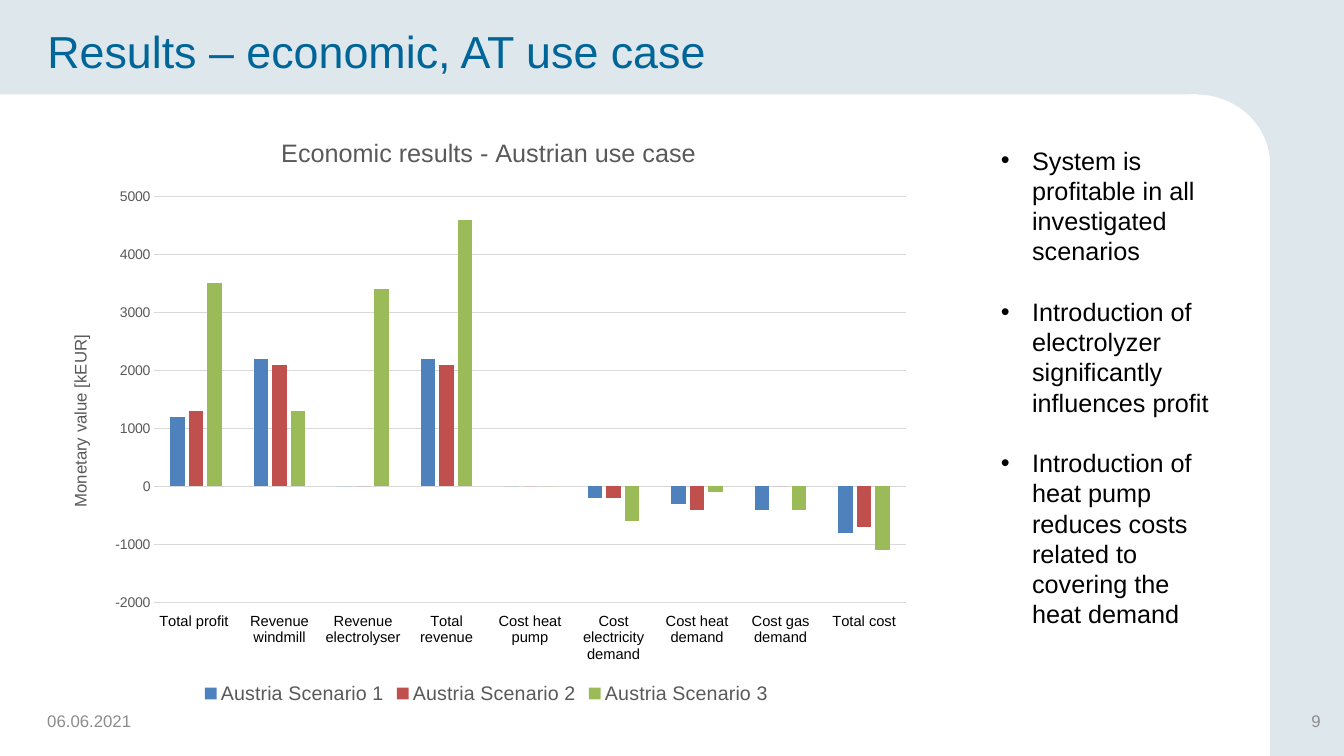
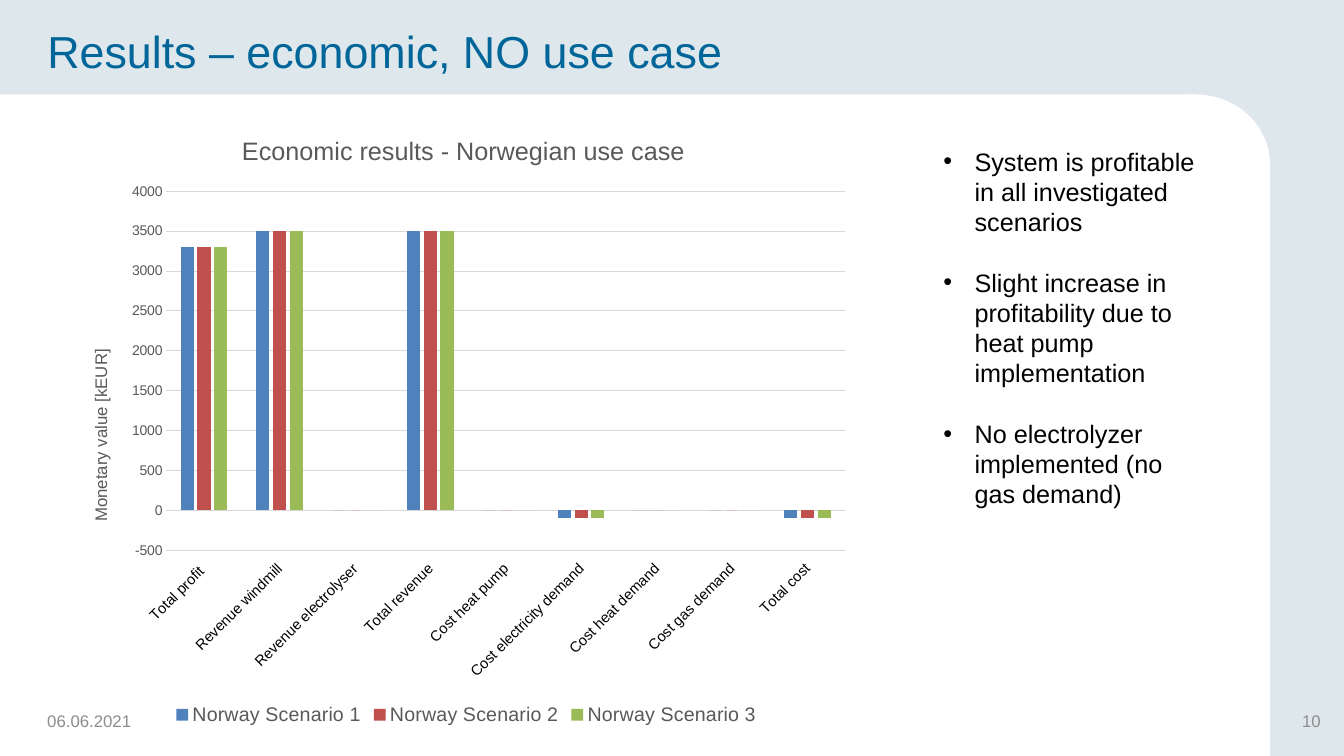
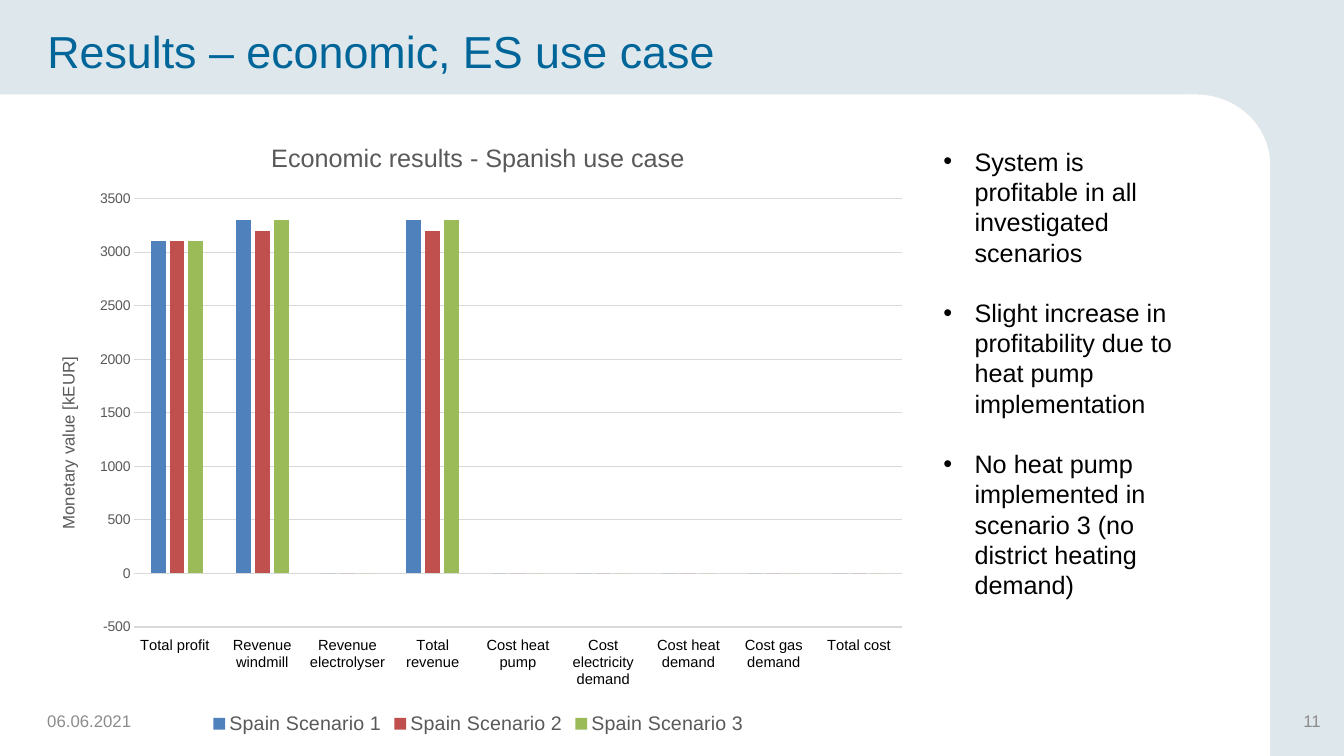
from dataclasses import dataclass

from lxml.etree import SubElement
from pptx import Presentation
from pptx.chart.data import CategoryChartData
from pptx.dml.color import RGBColor
from pptx.enum.chart import (XL_CHART_TYPE, XL_LEGEND_POSITION, XL_TICK_LABEL_POSITION,
                             XL_TICK_MARK)
from pptx.enum.shapes import MSO_SHAPE
from pptx.enum.text import MSO_ANCHOR, PP_ALIGN
from pptx.oxml.ns import qn
from pptx.util import Inches, Pt


@dataclass(frozen=True)
class Theme:
    font: str = "Arial"
    background: str = "DEE7EC"
    panel: str = "FFFFFF"
    title: str = "006699"
    footer: str = "8C8C8C"
    text: str = "000000"
    chart_text: str = "595959"
    grid: str = "D9D9D9"
    series: tuple = ("4F81BD", "C0504D", "9BBB59")
    title_size: float = 32
    body_size: float = 18
    legend_size: float = 14
    footer_size: float = 12
    category_size: float = 10.5
    value_size: float = 10


WIDTH, HEIGHT = Inches(13.33), Inches(7.5)
DATE = "06.06.2021"
CATEGORIES = ("Total profit ", "Revenue windmill", "Revenue electrolyser", "Total revenue",
              "Cost heat pump", "Cost electricity demand", "Cost heat demand",
              "Cost gas demand", "Total cost")

# White content panel: two rectangles meeting at a rounded corner
PANEL = (
    (MSO_SHAPE.RECTANGLE, (0, 12.5, 89.1, 87.5)),
    (MSO_SHAPE.OVAL, (83.4, 12.5, 11.1, 18.5)),
    (MSO_SHAPE.RECTANGLE, (53.55, 21.6, 40.95, 78.4)),
)

# Areas are left, top, width, height in percent of the slide;
# plot and title places are shares of the chart
USE_CASES = (
    dict(
        code="AT", country="Austria", adjective="Austrian", number=9,
        chart_area=(3.68, 15.87, 65.03, 77.87), plot=(0.12, 0.13, 0.86, 0.69),
        title_at=(0.26, 0.02), axis_title_at=(0.02, 0.36),
        scale=(-2000, 5000, 1000), label_angle=0,
        values=((1200, 2200, 0, 2200, 0, -200, -300, -400, -800),
                (1300, 2100, 0, 2100, 0, -200, -400, 0, -700),
                (3500, 1300, 3400, 4600, 0, -600, -100, -400, -1100)),
        text_area=(73.73, 18.53, 17.93, 70),
        points=("System is profitable in all investigated scenarios",
                "Introduction of electrolyzer significantly influences profit",
                "Introduction of heat pump reduces costs related to covering the heat demand"),
    ),
    dict(
        code="NO", country="Norway", adjective="Norwegian", number=10,
        chart_area=(5.33, 14.67, 58.73, 81.87), plot=(0.12, 0.13, 0.86, 0.58),
        title_at=(0.21, 0.03), axis_title_at=(0.02, 0.38),
        scale=(-500, 4000, 500), label_angle=-45,
        values=((3300, 3500, 0, 3500, 0, -100, 0, 0, -100),
                (3300, 3500, 0, 3500, 0, -100, 0, 0, -100),
                (3300, 3500, 0, 3500, 0, -100, 0, 0, -100)),
        text_area=(69.45, 18.67, 20.7, 53.87),
        points=("System is profitable in all investigated scenarios",
                "Slight increase in profitability due to heat pump implementation",
                "No electrolyzer implemented (no gas demand)"),
    ),
    dict(
        code="ES", country="Spain", adjective="Spanish", number=11,
        chart_area=(2.78, 15.6, 65.63, 82.13), plot=(0.11, 0.13, 0.87, 0.69),
        title_at=(0.26, 0.03), axis_title_at=(0.02, 0.38),
        scale=(-500, 3500, 500), label_angle=0,
        values=((3100, 3300, 0, 3300, 0, 0, 0, 0, 0),
                (3100, 3200, 0, 3200, 0, 0, 0, 0, 0),
                (3100, 3300, 0, 3300, 0, 0, 0, 0, 0)),
        text_area=(69.45, 18.67, 19.8, 61.87),
        points=("System is profitable in all investigated scenarios",
                "Slight increase in profitability due to heat pump implementation",
                "No heat pump implemented in scenario 3 (no district heating demand)"),
    ),
)


def place(parent, index, **shares):
    """Give a chart part a fixed place, in shares of the chart."""
    layout = parent.find(qn("c:layout"))
    if layout is not None:
        parent.remove(layout)
    layout = parent.makeelement(qn("c:layout"), {})
    parent.insert(index, layout)
    manual = SubElement(layout, qn("c:manualLayout"))
    if "w" in shares:
        SubElement(manual, qn("c:layoutTarget"), val="inner")
    for mode in ("xMode", "yMode"):
        SubElement(manual, qn(f"c:{mode}"), val="edge")
    for key, share in shares.items():
        SubElement(manual, qn(f"c:{key}"), val=str(share))


def rotate(element, degrees):
    body = next(element.iter(qn("a:bodyPr")))
    body.set("rot", str(degrees * 60000))
    body.set("vert", "horz")


class Deck:
    def __init__(self, theme):
        self.theme = theme
        self.presentation = Presentation()
        self.presentation.slide_width = WIDTH
        self.presentation.slide_height = HEIGHT
        self.slide = None

    def area(self, left, top, width, height):
        return (round(left * WIDTH / 100), round(top * HEIGHT / 100),
                round(width * WIDTH / 100), round(height * HEIGHT / 100))

    def style(self, font, size, color):
        font.name, font.size, font.bold = self.theme.font, Pt(size), False
        font.color.rgb = RGBColor.from_string(color)

    def run(self, paragraph, text, size, color):
        run = paragraph.add_run()
        run.text = text
        self.style(run.font, size, color)

    def add_slide(self, title, number):
        theme = self.theme
        self.slide = self.presentation.slides.add_slide(self.presentation.slide_layouts[6])
        fill = self.slide.background.fill
        fill.solid()
        fill.fore_color.rgb = RGBColor.from_string(theme.background)
        for kind, area in PANEL:
            self.add_panel(kind, area)
        self.add_line((2.78, 0, 85.43, 13.33), title, theme.title_size, theme.title)
        self.add_line((2.78, 92.67, 22.73, 5.33), DATE, theme.footer_size, theme.footer)
        self.add_line((75.68, 92.67, 23.33, 5.33), str(number), theme.footer_size,
                      theme.footer, PP_ALIGN.RIGHT)

    def add_panel(self, kind, area):
        shape = self.slide.shapes.add_shape(kind, *self.area(*area))
        shape.shadow.inherit = False
        shape.fill.solid()
        shape.fill.fore_color.rgb = RGBColor.from_string(self.theme.panel)
        shape.line.fill.background()

    def add_text_frame(self, area, anchor):
        frame = self.slide.shapes.add_textbox(*self.area(*area)).text_frame
        frame.word_wrap = True
        frame.vertical_anchor = anchor
        return frame

    def add_line(self, area, text, size, color, align=PP_ALIGN.LEFT):
        paragraph = self.add_text_frame(area, MSO_ANCHOR.MIDDLE).paragraphs[0]
        paragraph.alignment = align
        self.run(paragraph, text, size, color)

    def add_bullets(self, area, points):
        frame = self.add_text_frame(area, MSO_ANCHOR.TOP)
        for index, point in enumerate(points):
            paragraph = frame.add_paragraph() if index else frame.paragraphs[0]
            properties = paragraph._p.get_or_add_pPr()
            properties.set("marL", str(Inches(0.31)))
            properties.set("indent", str(-Inches(0.31)))
            SubElement(properties, qn("a:buFont"), typeface=self.theme.font)
            SubElement(properties, qn("a:buChar"), char="•")
            paragraph.space_before = Pt(21.6 if index else 0)
            self.run(paragraph, point, self.theme.body_size, self.theme.text)

    def add_chart(self, case):
        theme = self.theme
        data = CategoryChartData(number_format="0")
        data.categories = CATEGORIES
        for number, values in enumerate(case["values"], 1):
            data.add_series(f"{case['country']} Scenario {number}", values)
        chart = self.slide.shapes.add_chart(
            XL_CHART_TYPE.COLUMN_CLUSTERED, *self.area(*case["chart_area"]), data).chart
        self.style(chart.font, theme.value_size, theme.text)

        # Columns
        columns = chart.plots[0]
        columns.gap_width, columns.overlap = 219, -27
        columns.vary_by_categories = False
        for series, color in zip(columns.series, theme.series):
            series.invert_if_negative = False
            series.format.fill.solid()
            series.format.fill.fore_color.rgb = RGBColor.from_string(color)
        left, top, width, height = case["plot"]
        place(chart.element.find(f".//{qn('c:plotArea')}"), 0, x=left, y=top, w=width, h=height)

        # Title and legend
        chart.has_title = True
        self.run(chart.chart_title.text_frame.paragraphs[0],
                 f"Economic results - {case['adjective']} use case",
                 theme.body_size, theme.chart_text)
        chart.chart_title.include_in_layout = False
        left, top = case["title_at"]
        place(chart.element.find(f".//{qn('c:chart')}/{qn('c:title')}"), 1, x=left, y=top)
        chart.has_legend = True
        chart.legend.position = XL_LEGEND_POSITION.BOTTOM
        chart.legend.include_in_layout = False
        self.style(chart.legend.font, theme.legend_size, theme.chart_text)

        # Axes
        category_axis, value_axis = chart.category_axis, chart.value_axis
        for axis in (category_axis, value_axis):
            axis.major_tick_mark = axis.minor_tick_mark = XL_TICK_MARK.NONE
        self.style(category_axis.tick_labels.font, theme.category_size, theme.text)
        category_axis.tick_label_position = XL_TICK_LABEL_POSITION.LOW
        if case["label_angle"]:
            rotate(chart.element.find(f".//{qn('c:catAx')}/{qn('c:txPr')}"),
                   case["label_angle"])
        self.style(value_axis.tick_labels.font, theme.value_size, theme.chart_text)
        value_axis.tick_labels.number_format = "0"
        value_axis.tick_labels.number_format_is_linked = False
        value_axis.minimum_scale, value_axis.maximum_scale, value_axis.major_unit = case["scale"]
        value_axis.format.line.fill.background()
        value_axis.has_major_gridlines = True
        for line in (category_axis.format.line, value_axis.major_gridlines.format.line):
            line.color.rgb = RGBColor.from_string(theme.grid)
            line.width = Pt(0.75)
        self.run(value_axis.axis_title.text_frame.paragraphs[0], "Monetary value [kEUR]",
                 theme.footer_size, theme.chart_text)
        axis_title = chart.element.find(f".//{qn('c:valAx')}/{qn('c:title')}")
        rotate(axis_title, -90)
        left, top = case["axis_title_at"]
        place(axis_title, 1, x=left, y=top)


def main():
    deck = Deck(Theme())
    for case in USE_CASES:
        deck.add_slide(f"Results – economic, {case['code']} use case", case["number"])
        deck.add_chart(case)
        deck.add_bullets(case["text_area"], case["points"])
    deck.presentation.save("out.pptx")


if __name__ == "__main__":
    main()
